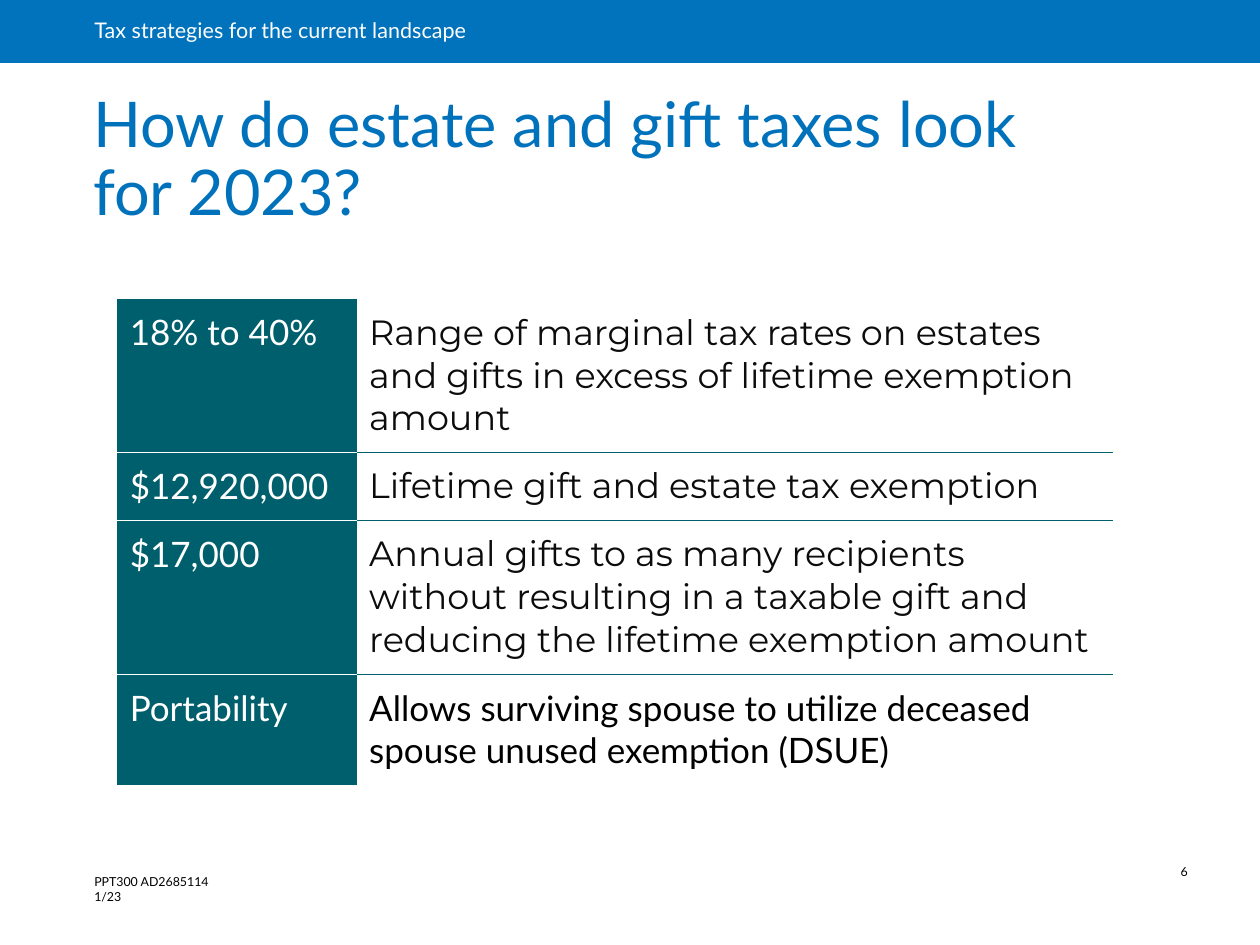
from pptx import Presentation
from pptx.dml.color import RGBColor
from pptx.enum import shapes, text
from pptx.oxml import ns, xmlchemy
from pptx.util import Inches, Pt

THEME = {
    "banner": "0073BC", "title": "0072BC", "teal": "005F6C", "white": "FFFFFF",
    "ink": "0C0C0C", "black": "000000",
    "head": "Lato", "body": "Montserrat",
    "banner_pt": 12.3, "title_pt": 36, "table_pt": 20, "footer_pt": 7.1,
}

BANNER = "Tax strategies for the current landscape"
TITLE = ["How do estate and gift taxes look", "for 2023?"]
FOOTER = ["PPT300 AD2685114", "1/23"]
PAGE = "6"
# label, explanation, font and colour of the explanation, row height
ROWS = [
    ("18% to 40%", "Range of marginal tax rates on estates and gifts in excess of "
     "lifetime exemption amount", "body", "ink", 1.22),
    ("$12,920,000", "Lifetime gift and estate tax exemption", "body", "ink", 0.54),
    ("$17,000", "Annual gifts to as many recipients without resulting in a taxable gift "
     "and reducing the lifetime exemption amount", "body", "ink", 1.22),
    ("Portability", "Allows surviving spouse to utilize deceased spouse unused exemption "
     "(DSUE)", "head", "black", 0.88),
]
COLUMNS = (1.9, 6)


def color(name):
    return RGBColor.from_string(THEME[name])


def write(tf, lines, size, ink, font="head", spacing=None):
    """Put the lines in one paragraph, parted by line breaks."""
    p = tf.paragraphs[0]
    p.alignment = text.PP_ALIGN.LEFT
    if spacing:
        p.line_spacing = spacing
    for i, line in enumerate(lines):
        if i:
            p.add_line_break()
        r = p.add_run()
        r.text = line
        r.font.name = THEME[font]
        r.font.size = Pt(THEME[size])
        r.font.color.rgb = color(ink)


def set_insets(tf, left, top, right, bottom):
    tf.margin_left, tf.margin_top = Inches(left), Inches(top)
    tf.margin_right, tf.margin_bottom = Inches(right), Inches(bottom)


def add_text(s, box, insets, wrap=True, anchor=text.MSO_ANCHOR.TOP):
    tf = s.shapes.add_textbox(*map(Inches, box)).text_frame
    tf.word_wrap = wrap
    tf.vertical_anchor = anchor
    set_insets(tf, *insets)
    return tf


def set_borders(cell, **sides):
    """Draw the named sides (lnT, lnB) in theme colours; None hides a side."""
    tc_pr = cell._tc.get_or_add_tcPr()
    for i, tag in enumerate(("lnL", "lnR", "lnT", "lnB")):
        name = sides.get(tag)
        ln = xmlchemy.OxmlElement(f"a:{tag}")
        ln.set("w", str(Pt(0.5)))
        fill = xmlchemy.OxmlElement("a:solidFill" if name else "a:noFill")
        if name:
            rgb = xmlchemy.OxmlElement("a:srgbClr")
            rgb.set("val", THEME[name])
            fill.append(rgb)
        ln.append(fill)
        tc_pr.insert(i, ln)


def add_banner(s):
    sp = s.shapes.add_shape(shapes.MSO_SHAPE.RECTANGLE, 0, 0, Inches(10), Inches(0.5))
    sp.shadow.inherit = False
    sp.fill.solid()
    sp.fill.fore_color.rgb = color("banner")
    sp.line.fill.background()
    tf = sp.text_frame
    tf.word_wrap = True
    tf.vertical_anchor = text.MSO_ANCHOR.MIDDLE
    set_insets(tf, 0.75, 0, 0.22, 0)
    write(tf, [BANNER], "banner_pt", "white", spacing=0.9)


def add_tax_table(s):
    height = sum(row[-1] for row in ROWS)
    frame = s.shapes.add_table(len(ROWS), len(COLUMNS), Inches(0.93), Inches(2.37),
                               Inches(sum(COLUMNS)), Inches(height))
    table = frame.table
    table.first_row = table.horz_banding = False
    for column, width in zip(table.columns, COLUMNS):
        column.width = Inches(width)
    for i, (label, detail, font, ink, row_height) in enumerate(ROWS):
        table.rows[i].height = Inches(row_height)
        left, right = table.cell(i, 0), table.cell(i, 1)
        left.fill.solid()
        left.fill.fore_color.rgb = color("teal")
        right.fill.background()
        for cell, rule in ((left, "white"), (right, "teal")):
            set_insets(cell, 0.1, 0.1, 0.1, 0.1)
            set_borders(cell, lnT=rule if i else None,
                        lnB=rule if i < len(ROWS) - 1 else None)
        write(left.text_frame, [label], "table_pt", "white")
        write(right.text_frame, [detail], "table_pt", ink, font)


def main():
    prs = Presentation()
    prs.slide_width, prs.slide_height = Inches(10), Inches(7.5)
    s = prs.slides.add_slide(prs.slide_layouts[6])

    add_banner(s)
    footer = add_text(s, (0.65, 6.89, 1.2, 0.34), (0.1, 0.05, 0.1, 0.05), wrap=False)
    write(footer, FOOTER, "footer_pt", "black")
    page = add_text(s, (9.37, 6.83, 0.56, 0.2), (0, 0.04, 0.04, 0.04))
    write(page, [PAGE], "footer_pt", "black", spacing=0.9)
    title = add_text(s, (0.63, 0.7, 8.62, 1.18), (0.11, 0.06, 0.11, 0.06),
                     anchor=text.MSO_ANCHOR.BOTTOM)
    write(title, TITLE, "title_pt", "title", spacing=0.9)
    add_tax_table(s)

    prs.save("out.pptx")


if __name__ == "__main__":
    main()
